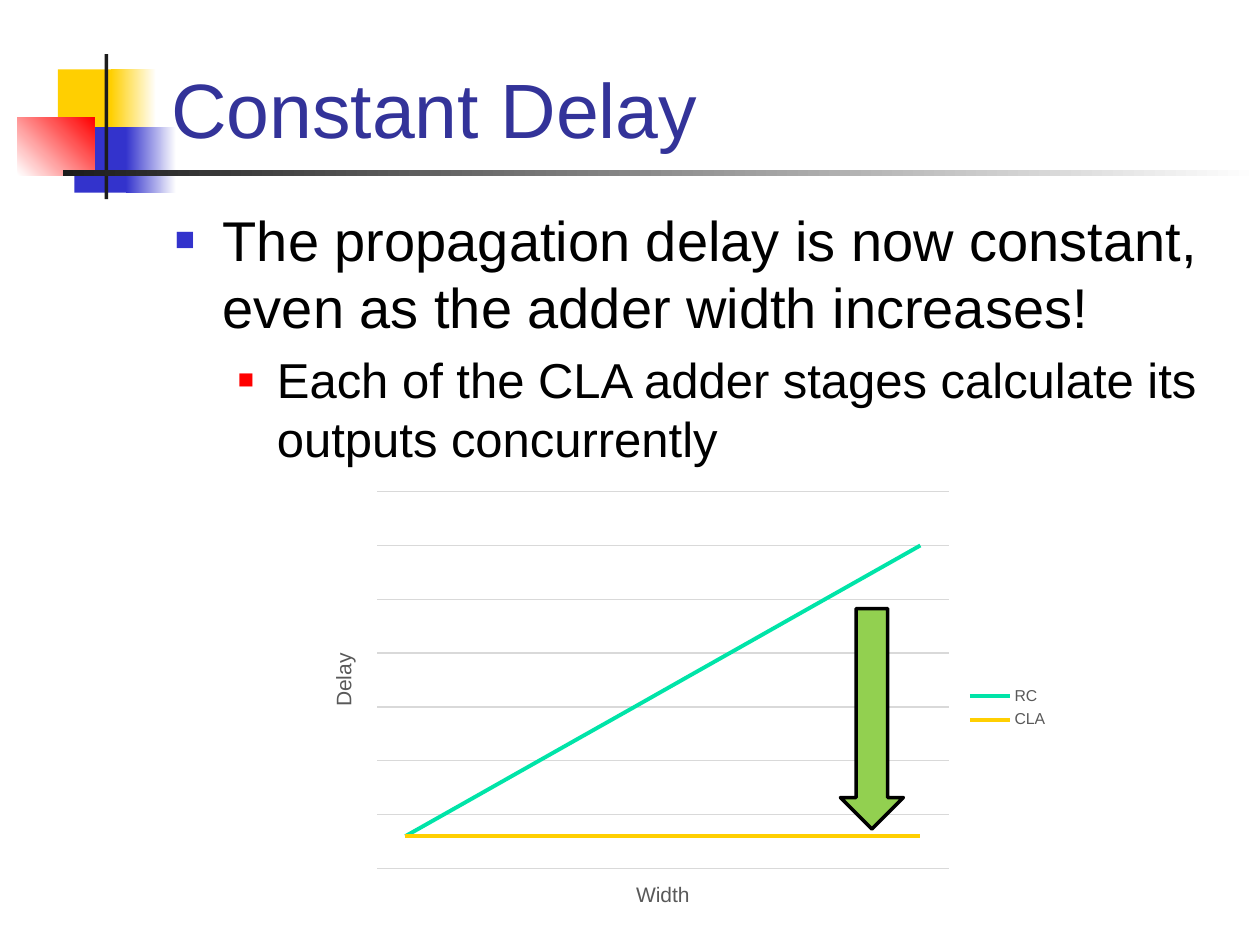
from lxml.etree import SubElement as Sub
from pptx import Presentation
from pptx.chart.data import CategoryChartData as Data
from pptx.dml.color import RGBColor
from pptx.enum.chart import XL_CHART_TYPE as Kind, XL_LEGEND_POSITION as Side
from pptx.enum.shapes import MSO_SHAPE as Form
from pptx.enum.text import MSO_ANCHOR as Anchor
from pptx.oxml.ns import qn
from pptx.util import Inches, Pt

FONT = "Arial"
TITLE = "Constant Delay"
# text, level, size, left margin, hanging indent, bullet colour, bullet size %
POINTS = [
    ("The propagation delay is now constant, even as the adder width increases!",
     0, 32, 0.38, 0.38, "3333CC", 60),
    ("Each of the CLA adder stages calculate its outputs concurrently",
     1, 28, 0.81, 0.31, "FF0000", 55),
]
# left, top, width, height, colours (two make a gradient), angle
DECOR = [
    (0.46, 0.55, 0.48, 0.52, ["FFCF01"], 0),
    (0.88, 0.55, 0.36, 0.52, ["FFCF01", "FFFFFF"], 0),
    (0.59, 1.01, 0.46, 0.52, ["3333CC"], 0),
    (1, 1.01, 0.4, 0.52, ["3333CC", "FFFFFF"], 0),
    (0.14, 0.93, 0.61, 0.46, ["FFFFFF", "FF0000"], 45),
    (0.83, 0.43, 0.03, 1.15, ["1C1C1C"], 0),
    (0.5, 1.35, 9.5, 0.05, ["1C1C1C", "FFFFFF"], 0),
]
WIDTHS = range(1, 11)
SERIES = [
    ("RC", [10 * n for n in WIDTHS], "00E4A8"),
    ("CLA", [10 for n in WIDTHS], "FFCF01"),
]
STEP, STEPS = 16.67, 7
PLOT = {"x": 0.095, "y": 0.02, "w": 0.757, "h": 0.836}  # shares of the chart


def rgb(code):
    return RGBColor.from_string(code)


def style(font, size, color):
    font.name, font.size, font.bold = FONT, Pt(size), False
    font.color.rgb = rgb(color)


def add_form(slide, form, box, colors, angle=0):
    shape = slide.shapes.add_shape(form, *map(Inches, box))
    shape.shadow.inherit = False
    shape.line.fill.background()
    if len(colors) == 1:
        shape.fill.solid()
        shape.fill.fore_color.rgb = rgb(colors[0])
    else:
        shape.fill.gradient()
        shape.fill.gradient_angle = angle
        for stop, color in zip(shape.fill.gradient_stops, colors):
            stop.color.rgb = rgb(color)
    return shape


def add_frame(slide, *box):
    frame = slide.shapes.add_textbox(*map(Inches, box)).text_frame
    frame.word_wrap = True
    return frame


def add_bullet(para, left, hang, color, size):
    props = para._p.get_or_add_pPr()
    props.set("marL", str(Inches(left)))
    props.set("indent", str(-Inches(hang)))
    Sub(Sub(props, qn("a:buClr")), qn("a:srgbClr"), val=color)
    Sub(props, qn("a:buSzPct"), val=str(size * 1000))
    Sub(props, qn("a:buFont"), typeface=FONT)
    Sub(props, qn("a:buChar"), char="■")


def add_points(slide):
    frame = add_frame(slide, 1.29, 1.58, 8.5, 5.12)
    for i, (text, level, size, *bullet) in enumerate(POINTS):
        para = frame.add_paragraph() if i else frame.paragraphs[0]
        para.text, para.level = text, level
        para.space_before = Pt(size * 0.2)
        style(para.font, size, "000000")
        add_bullet(para, *bullet)


def name_axis(axis, text):
    axis.visible = False
    frame = axis.axis_title.text_frame
    frame.text = text
    style(frame.paragraphs[0].font, 12, "595959")


def place_plot(chart):
    area = chart._chartSpace.chart.plotArea
    for old in area.findall(qn("c:layout")):
        area.remove(old)
    layout = area.makeelement(qn("c:layout"), {})
    area.insert(0, layout)
    manual = Sub(layout, qn("c:manualLayout"))
    Sub(manual, qn("c:layoutTarget"), val="inner")
    for mode in ("xMode", "yMode"):
        Sub(manual, qn("c:" + mode), val="edge")
    for side, share in PLOT.items():
        Sub(manual, qn("c:" + side), val=str(share))


def add_graph(slide):
    data = Data()
    data.categories = [str(n) for n in WIDTHS]
    for name, vals, _ in SERIES:
        data.add_series(name, vals)
    box = map(Inches, (2.42, 3.83, 6, 3.58))
    chart = slide.shapes.add_chart(Kind.LINE, *box, data).chart
    style(chart.font, 10, "000000")
    chart.has_title = False
    chart.has_legend = True
    chart.legend.position = Side.RIGHT
    chart.legend.include_in_layout = False
    style(chart.legend.font, 9, "595959")

    name_axis(chart.category_axis, "Width")
    axis = chart.value_axis
    name_axis(axis, "Delay")
    axis.minimum_scale, axis.maximum_scale = 0, round(STEP * STEPS, 2)
    axis.major_unit = STEP
    axis.has_major_gridlines = True
    grid = axis.major_gridlines.format.line
    grid.color.rgb, grid.width = rgb("D9D9D9"), Pt(0.75)

    for line, (_, _, color) in zip(chart.plots[0].series, SERIES):
        line.smooth = False
        line.format.line.color.rgb = rgb(color)
        line.format.line.width = Pt(2.25)
    place_plot(chart)


def main():
    deck = Presentation()
    deck.slide_width, deck.slide_height = Inches(10), Inches(7.5)
    slide = deck.slides.add_slide(deck.slide_layouts[6])
    for *box, colors, angle in DECOR:
        add_form(slide, Form.RECTANGLE, box, colors, angle)

    frame = add_frame(slide, 1.26, 0.02, 8.52, 1.25)
    frame.vertical_anchor = Anchor.BOTTOM
    frame.text = TITLE
    style(frame.paragraphs[0].font, 44, "333399")
    add_points(slide)
    add_graph(slide)

    arrow = add_form(slide, Form.DOWN_ARROW, (6.67, 4.83, 0.5, 1.75), ["92D050"])
    arrow.line.color.rgb, arrow.line.width = rgb("000000"), Pt(2)
    deck.save("out.pptx")


if __name__ == "__main__":
    main()
